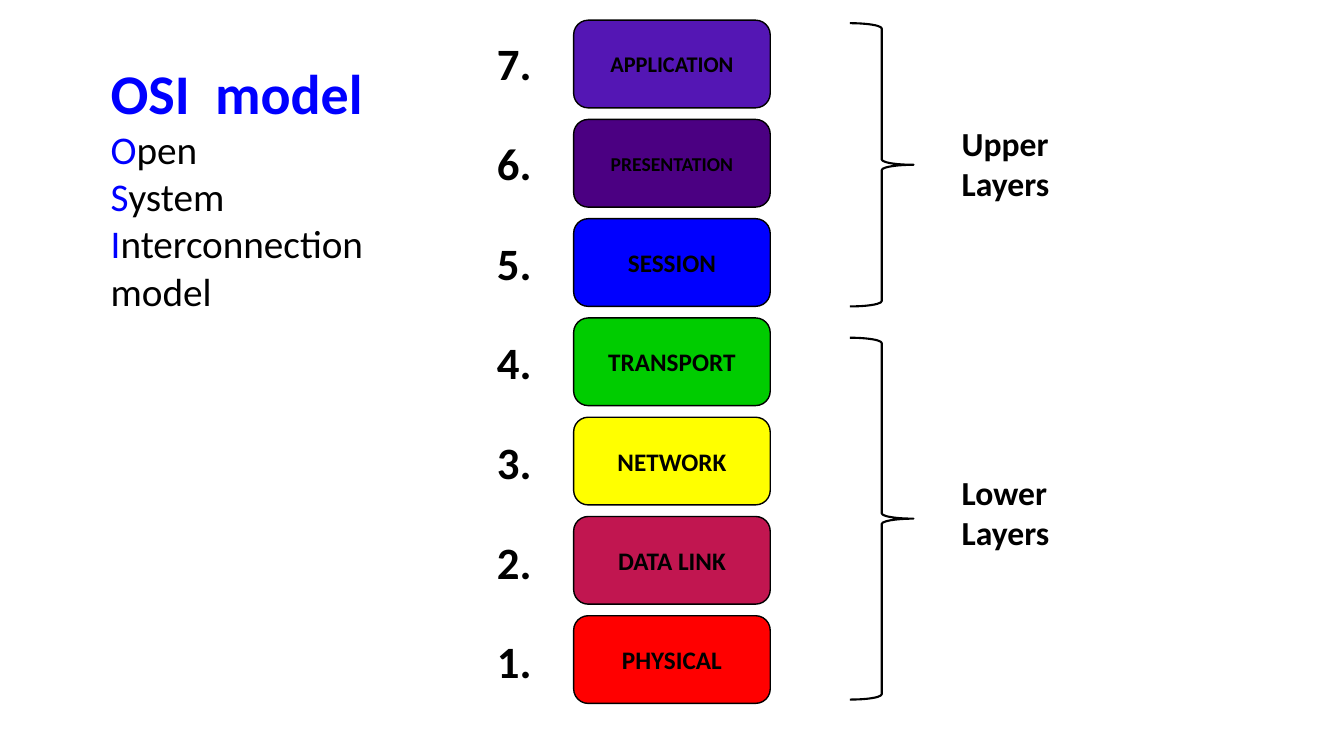
import pptx
import pptx.util
import pptx.dml.color
import pptx.enum.shapes
import pptx.enum.text

RGBColor = pptx.dml.color.RGBColor
SHAPE = pptx.enum.shapes.MSO_SHAPE
BLACK = RGBColor(0x00, 0x00, 0x00)
BLUE = RGBColor(0x00, 0x00, 0xFF)
VIOLET = RGBColor(0x54, 0x16, 0xB4)
INDIGO = RGBColor(0x4B, 0x00, 0x82)
GREEN = RGBColor(0x00, 0xCC, 0x00)
YELLOW = RGBColor(0xFF, 0xFF, 0x00)
CRIMSON = RGBColor(0xC1, 0x16, 0x50)
RED = RGBColor(0xFF, 0x00, 0x00)


class Deck:
    """Holds the style and the slide; lengths are percent of its size."""
    font = "Calibri"

    def __init__(self):
        self.show = pptx.Presentation()
        self.show.slide_width = pptx.util.Inches(13.33)
        self.show.slide_height = pptx.util.Inches(7.5)
        self.slide = self.show.slides.add_slide(self.show.slide_layouts[6])

    def place(self, left, top, width, height):
        wide, high = self.show.slide_width, self.show.slide_height
        return [int(share * size / 100) for share, size in
                ((left, wide), (top, high), (width, wide), (height, high))]

    def add_run(self, para, text, size, color=BLACK, bold=True):
        run = para.add_run()
        run.text = text
        run.font.name = self.font
        run.font.size = pptx.util.Pt(size)
        run.font.bold = bold
        run.font.color.rgb = color

    def shape(self, kind, box, weight, fill=None):
        shape = self.slide.shapes.add_shape(kind, *self.place(*box))
        shape.shadow.inherit = False
        shape.line.color.rgb = BLACK
        shape.line.width = pptx.util.Pt(weight)
        if fill is None:
            shape.fill.background()
        else:
            shape.fill.solid()
            shape.fill.fore_color.rgb = fill
        return shape

    def layer(self, box, name, size, fill):
        frame = self.shape(SHAPE.ROUNDED_RECTANGLE, box, 1, fill).text_frame
        frame.vertical_anchor = pptx.enum.text.MSO_ANCHOR.MIDDLE
        para = frame.paragraphs[0]
        para.alignment = pptx.enum.text.PP_ALIGN.CENTER
        self.add_run(para, name, size)

    def brace(self, box):
        self.shape(SHAPE.RIGHT_BRACE, box, 1.5)

    def text(self, box, lines):
        """Each line is a list of runs: (text, size, color, bold)."""
        frame = self.slide.shapes.add_textbox(*self.place(*box)).text_frame
        frame.word_wrap = False
        frame.auto_size = pptx.enum.text.MSO_AUTO_SIZE.SHAPE_TO_FIT_TEXT
        for row, line in enumerate(lines):
            para = frame.add_paragraph() if row else frame.paragraphs[0]
            for run in line:
                self.add_run(para, *run)


LAYERS = [
    ("APPLICATION", 16, VIOLET),
    ("PRESENTATION", 14, INDIGO),
    ("SESSION", 18, BLUE),
    ("TRANSPORT", 18, GREEN),
    ("NETWORK", 18, YELLOW),
    ("DATA LINK", 18, CRIMSON),
    ("PHYSICAL", 18, RED),
]

# Brace top and height, label top, label word
GROUPS = [(3.07, 37.47, 15.6, "Upper"), (44.67, 47.87, 61.73, "Lower")]


def main():
    deck = Deck()

    # Layer stack with its numbers, top down
    for row, (name, size, fill) in enumerate(LAYERS):
        deck.layer((42.68, 2.67 + 13.13 * row, 14.63, 11.6), name, size, fill)
        deck.text((36.23, 4.13 + 13.18 * row, 4.13, 8.53),
                  [[(f"{len(LAYERS) - row}.", 32)]])

    # Title and the words behind the letters
    words = [[(word[0], 28, BLUE, False), (word[1:], 28, BLACK, False)]
             for word in ("Open", "System", "Interconnection")]
    deck.text((7.5, 7.07, 21.23, 35.47),
              [[("OSI  model", 40, BLUE)], *words,
               [("model", 28, BLACK, False)]])

    # Braces and group labels
    for top, height, label, word in GROUPS:
        deck.brace((63.24, top, 4.73, height))
        deck.text((70.82, label, 8.1, 12.13), [[(word, 24)], [("Layers", 24)]])

    deck.show.save("out.pptx")


if __name__ == "__main__":
    main()
